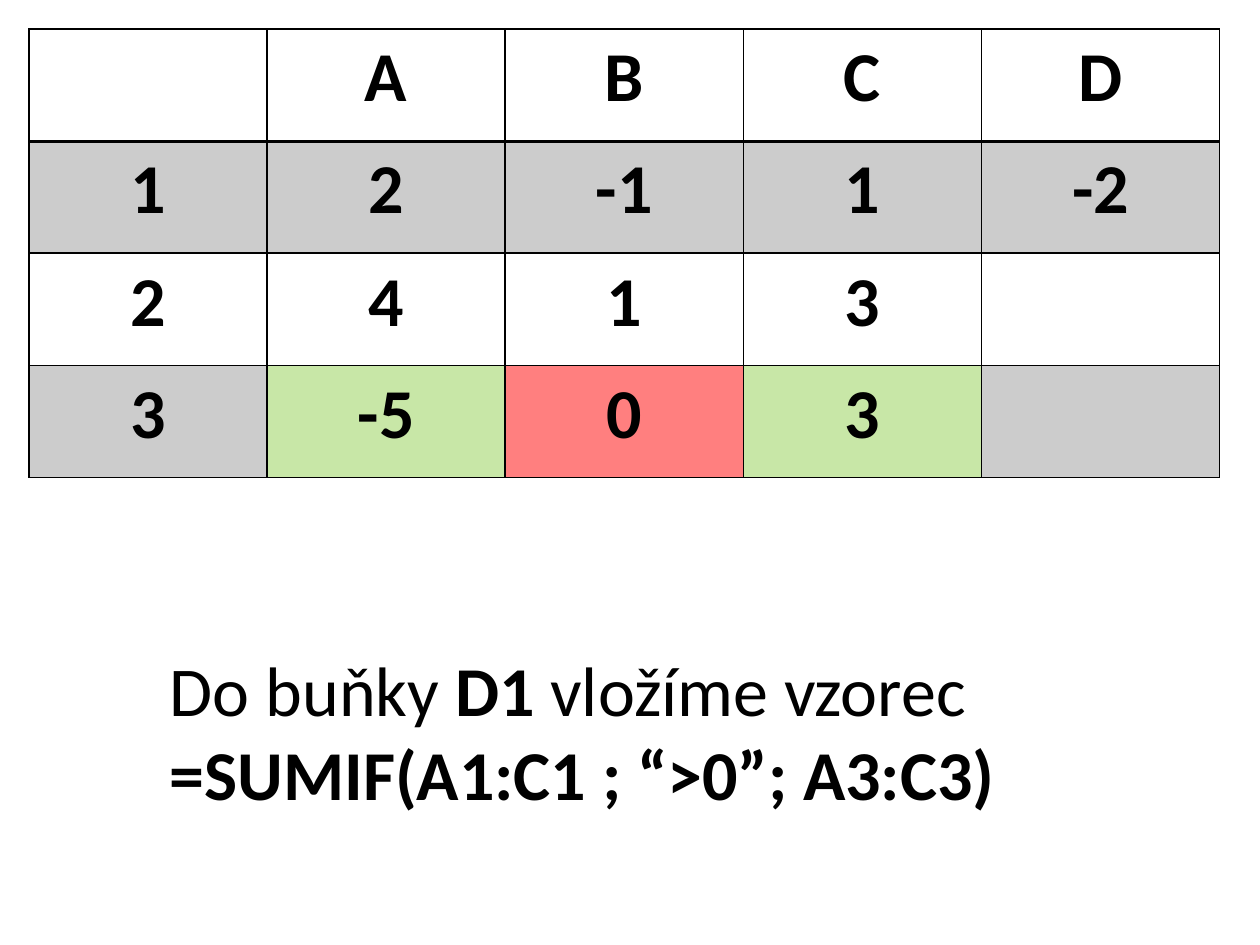
from lxml.etree import SubElement
from pptx import Presentation
from pptx.dml.color import RGBColor
from pptx.enum.text import MSO_AUTO_SIZE, PP_ALIGN
from pptx.oxml.ns import qn
from pptx.util import Inches, Pt

COLORS = {"black": "000000", "green": "92D050", "red": "FF0000"}
FONT, SIZE = "Calibri", Pt(40)
COL, ROW, MARGIN = 1.89, 0.89, 0.23

ROWS = [
    ["", "A", "B", "C", "D"],
    ["1", "2", "-1", "1", "-2"],
    ["2", "4", "1", "3", ""],
    ["3", "-5", "0", "3", ""],
]
# Cells of row 3 that the condition accepts or rejects
MARKED = {(3, 1): "green", (3, 2): "red", (3, 3): "green"}


def set_border(cell, side, width):
    ln = SubElement(cell._tc.get_or_add_tcPr(), qn(f"a:ln{side}"), w=str(Pt(width)))
    fill = SubElement(ln, qn("a:solidFill"))
    SubElement(fill, qn("a:srgbClr"), val=COLORS["black"])


def set_fill(cell, color, opacity):
    """Fill a cell with a colour at the given opacity in percent."""
    cell.fill.solid()
    cell.fill.fore_color.rgb = RGBColor.from_string(COLORS[color])
    clr = cell._tc.tcPr.find(f"{qn('a:solidFill')}/{qn('a:srgbClr')}")
    SubElement(clr, qn("a:alpha"), val=str(opacity * 1000))


prs = Presentation()
prs.slide_width, prs.slide_height = Inches(10), Inches(7.5)
s = prs.slides.add_slide(prs.slide_layouts[6])

# Sheet with column letters and row numbers
n_rows, n_cols = len(ROWS), len(ROWS[0])
table = s.shapes.add_table(n_rows, n_cols, Inches(MARGIN), Inches(MARGIN),
                           Inches(COL * n_cols), Inches(ROW * n_rows)).table
for column in table.columns:
    column.width = Inches(COL)
for row in table.rows:
    row.height = Inches(ROW)

for i, values in enumerate(ROWS):
    for j, value in enumerate(values):
        cell = table.cell(i, j)
        for side in "LRTB":
            header_line = (i, side) in [(0, "B"), (1, "T")]
            set_border(cell, side, 2 if header_line else 1)
        if (i, j) in MARKED:
            set_fill(cell, MARKED[i, j], 50)
        elif i % 2:
            set_fill(cell, "black", 20)
        else:
            cell.fill.background()
        p = cell.text_frame.paragraphs[0]
        p.text = value
        p.alignment = PP_ALIGN.CENTER
        p.font.name, p.font.size, p.font.bold = FONT, SIZE, True
        p.font.color.rgb = RGBColor.from_string(COLORS["black"])

# Formula
tf = s.shapes.add_textbox(Inches(1.25), Inches(5.08), Inches(7.89), Inches(1.45)).text_frame
tf.word_wrap = True
tf.auto_size = MSO_AUTO_SIZE.SHAPE_TO_FIT_TEXT
p = tf.paragraphs[0]
p.font.name, p.font.size = FONT, SIZE
p.font.color.rgb = RGBColor.from_string(COLORS["black"])
for text, bold in [("Do buňky ", False), ("D1 ", True), ("vložíme vzorec ", False),
                   ("=SUMIF(A1:C1 ; “>0”; A3:C3)", True)]:
    r = p.add_run()
    r.text = text
    r.font.bold = bold

prs.save("out.pptx")
